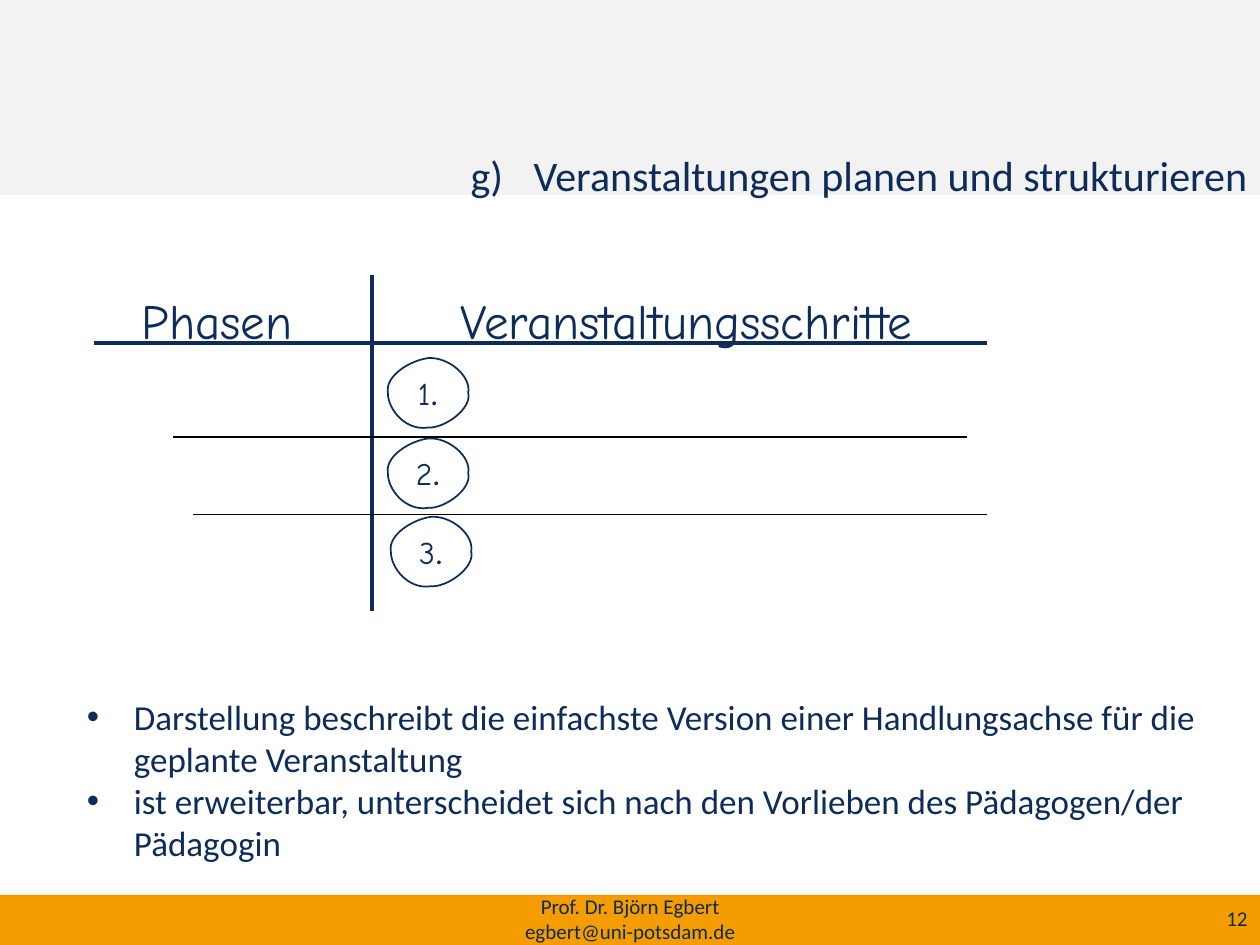
from lxml import etree
from pptx import Presentation
from pptx.dml.color import RGBColor
from pptx.enum.shapes import MSO_CONNECTOR, MSO_SHAPE
from pptx.enum.text import MSO_ANCHOR, PP_ALIGN
from pptx.oxml.ns import qn
from pptx.util import Cm, Pt

LEFT, CENTER, RIGHT = PP_ALIGN.LEFT, PP_ALIGN.CENTER, PP_ALIGN.RIGHT
TOP, MIDDLE = MSO_ANCHOR.TOP, MSO_ANCHOR.MIDDLE
STRAIGHT = MSO_CONNECTOR.STRAIGHT
RECTANGLE = MSO_SHAPE.RECTANGLE

COLORS = {"navy": "0D2C5A", "orange": "F59C00", "gray": "F2F2F2", "black": "000000"}
BODY_FONT = "Calibri"
HAND_FONT = "Comic Neue"

CIRCLE_START = (0, 0.7)
CIRCLE_CURVES = [
    ((-0.06, 0.36), (0.44, 0.05), (0.81, 0)),
    ((1.22, -0.03), (1.68, 0.36), (1.62, 0.7)),
    ((1.7, 1.02), (1.14, 1.42), (0.81, 1.4)),
    ((0.36, 1.47), (0, 1.04), CIRCLE_START),
]


def color(name):
    return RGBColor.from_string(COLORS[name])


def add_run(paragraph, text, size, font=BODY_FONT):
    run = paragraph.add_run()
    run.text = text
    run.font.size = Pt(size)
    run.font.name = font
    run.font.color.rgb = color("navy")


def add_band(slide, top, height, fill):
    shape = slide.shapes.add_shape(RECTANGLE, 0, Cm(top), Cm(25.4), Cm(height))
    shape.shadow.inherit = False
    shape.fill.solid()
    shape.fill.fore_color.rgb = color(fill)
    shape.line.fill.background()


def add_text(slide, box, lines, size, font=BODY_FONT, align=LEFT, anchor=TOP,
             wrap=True, indent=0, marker=()):
    shape = slide.shapes.add_textbox(*(Cm(length) for length in box))
    frame = shape.text_frame
    frame.word_wrap = wrap
    frame.vertical_anchor = anchor
    for index, line in enumerate(lines):
        paragraph = frame.add_paragraph() if index else frame.paragraphs[0]
        paragraph.alignment = align
        if marker:
            add_marker(paragraph, indent, marker)
        for part_index, part in enumerate(line.split("\n")):
            if part_index:
                paragraph.add_line_break()
            add_run(paragraph, part, size, font)


def add_marker(paragraph, indent, marker):
    properties = paragraph._p.get_or_add_pPr()
    properties.set("marL", str(Cm(indent)))
    properties.set("indent", str(-Cm(indent)))
    for tag, attributes in marker:
        etree.SubElement(properties, qn(tag), attributes)


def add_line(slide, start, end, line_color, width):
    connector = slide.shapes.add_connector(
        STRAIGHT, *(Cm(length) for length in start + end))
    connector.line.color.rgb = color(line_color)
    connector.line.width = Pt(width)
    etree.SubElement(connector._element.spPr, qn("a:effectLst"))


def round_off(shape):
    segments = list(shape._element.iter(qn("a:lnTo")))
    for segment, curve in zip(segments, CIRCLE_CURVES):
        bezier = etree.Element(qn("a:cubicBezTo"))
        for x, y in curve:
            etree.SubElement(bezier, qn("a:pt"), {"x": str(Cm(x)), "y": str(Cm(y))})
        segment.getparent().replace(segment, bezier)


def add_step_circle(slide, left, top, number):
    builder = slide.shapes.build_freeform(
        Cm(left + CIRCLE_START[0]), Cm(top + CIRCLE_START[1]))
    ends = [curve[-1] for curve in CIRCLE_CURVES]
    builder.add_line_segments([(Cm(left + x), Cm(top + y)) for x, y in ends])
    shape = builder.convert_to_shape()
    round_off(shape)
    shape.shadow.inherit = False
    shape.fill.background()
    shape.line.color.rgb = color("navy")
    shape.line.width = Pt(1)
    shape.text_frame.vertical_anchor = MIDDLE
    paragraph = shape.text_frame.paragraphs[0]
    paragraph.alignment = CENTER
    add_run(paragraph, str(number), 18, HAND_FONT)
    add_run(paragraph, ".", 18)


def main():
    presentation = Presentation()
    presentation.slide_width = Cm(25.4)
    presentation.slide_height = Cm(19.05)
    slide = presentation.slides.add_slide(presentation.slide_layouts[6])

    add_band(slide, 0, 3.93, "gray")
    add_band(slide, 18.04, 1.01, "orange")
    add_text(slide, (19.3, 18, 6.1, 1.02), ["12"], 12, align=RIGHT, anchor=MIDDLE)
    add_text(slide, (8.41, 18, 8.59, 1.03),
             ["Prof. Dr. Björn Egbert\negbert@uni-potsdam.de"], 12,
             align=CENTER, anchor=MIDDLE)

    for left, width, heading in ((2.1, 4.55, "Phasen"),
                                 (6.98, 13.72, "Veranstaltungsschritte")):
        add_text(slide, (left, 5.73, width, 1.45), [heading], 28, HAND_FONT,
                 align=CENTER, wrap=False)
    add_line(slide, (1.9, 6.92), (19.89, 6.92), "navy", 2.25)
    add_line(slide, (7.49, 5.54), (7.49, 12.32), "navy", 2.25)

    for number, (left, top) in enumerate(((7.82, 7.22), (7.82, 8.84), (7.88, 10.42)), 1):
        add_step_circle(slide, left, top, number)
    for left, top in ((3.49, 8.81), (3.89, 10.37)):
        add_line(slide, (left, top), (left + 16, top), "black", 0.75)

    add_text(slide, (1.5, 13.89, 23.19, 3.68),
             ["Darstellung beschreibt die einfachste Version einer Handlungsachse "
              "für die geplante Veranstaltung",
              "ist erweiterbar, unterscheidet sich nach den Vorlieben des "
              "Pädagogen/der Pädagogin"],
             20, indent=0.95,
             marker=(("a:buFont", {"typeface": "Arial"}), ("a:buChar", {"char": "•"})))
    add_text(slide, (3.5, 2.88, 21.9, 1.24), ["Veranstaltungen planen und strukturieren"],
             24, align=RIGHT, indent=1.27,
             marker=(("a:buAutoNum", {"type": "alphaLcParenR", "startAt": "7"}),))

    presentation.save("out.pptx")


if __name__ == "__main__":
    main()
